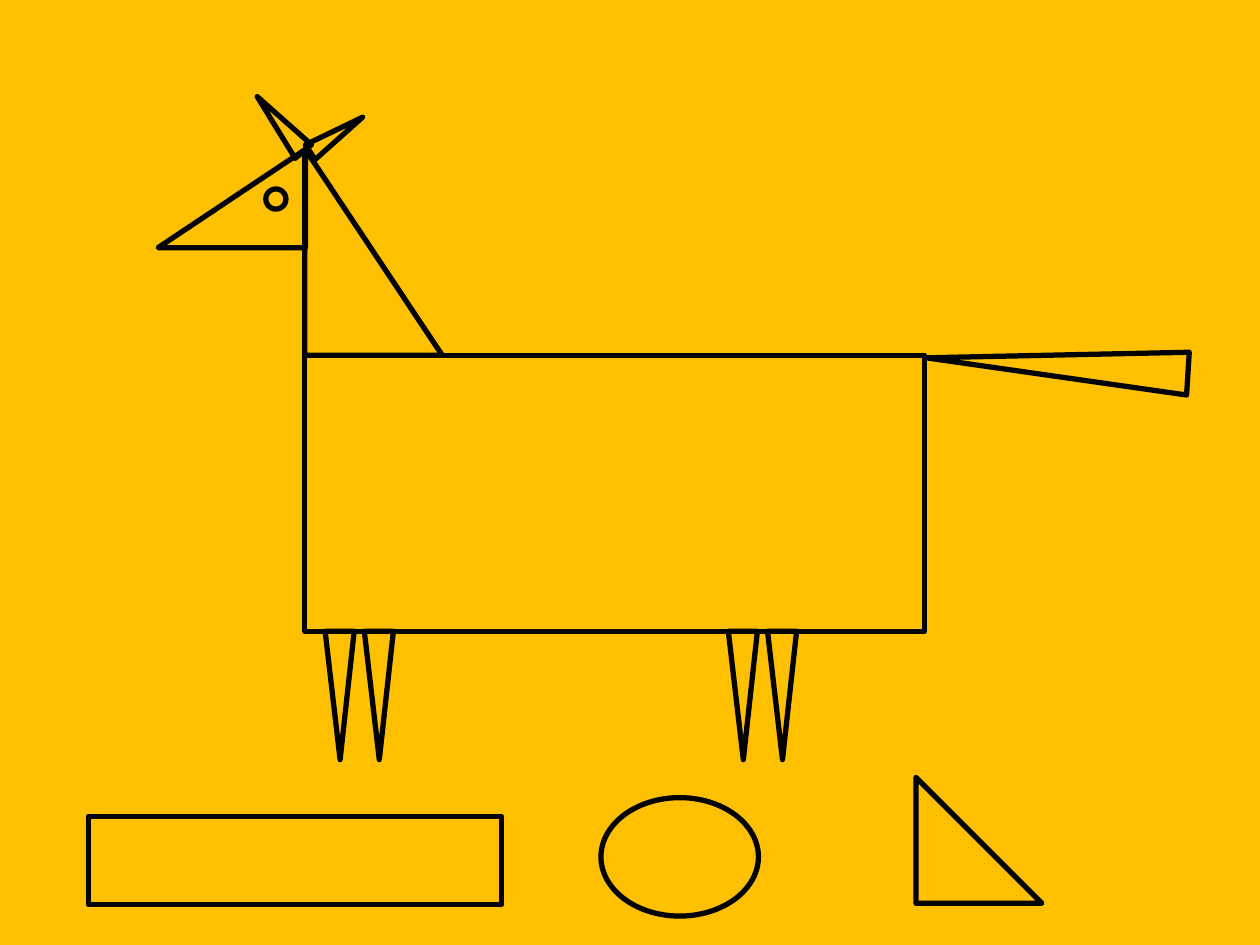
import pptx
import pptx.dml.color
import pptx.enum.shapes
import pptx.util

Pt = pptx.util.Pt
KIND = pptx.enum.shapes.MSO_SHAPE
AMBER = pptx.dml.color.RGBColor(0xFF, 0xC0, 0x00)
BLACK = pptx.dml.color.RGBColor(0x00, 0x00, 0x00)
BODY_LEFT, BODY_TOP, BODY_WIDTH, BODY_HEIGHT = 174.2, 203, 354.2, 157.7
BODY_BOTTOM = BODY_TOP + BODY_HEIGHT
LEG_GAP = 22.4
TRIANGLE_APEX = 0.485


def add_outline(shapes, kind, left, top, width, height, rotation=0, apex=None):
    shape = shapes.add_shape(kind, Pt(left), Pt(top), Pt(width), Pt(height))
    shape.shadow.inherit = False
    shape.fill.background()
    shape.line.fill.solid()
    line_format = {"color.rgb": BLACK, "width": Pt(3)}
    shape.line.color.rgb = line_format["color.rgb"]
    shape.line.width = line_format["width"]
    shape.rotation = rotation
    if apex is not None:
        shape.adjustments[0] = apex
    return shape


def add_head(shapes):
    add_outline(shapes, KIND.RIGHT_TRIANGLE, BODY_LEFT, 85, 78.5, 118)
    add_outline(shapes, KIND.ISOSCELES_TRIANGLE, 187.2, 59, 10.1, 36, 56.2)
    add_outline(shapes, KIND.ISOSCELES_TRIANGLE, 154.1, 50.4, 12.2, 41, 320)
    add_outline(shapes, KIND.RIGHT_TRIANGLE, 104.4, 71.3, 56.2, 84.2, 270)
    add_outline(shapes, KIND.OVAL, 151.9, 108, 11.5, 11.5)


def add_legs(shapes):
    for pair_left in (185.8, 416.2):
        for step in range(2):
            add_outline(shapes, KIND.ISOSCELES_TRIANGLE, pair_left + step * LEG_GAP,
                        BODY_BOTTOM, 16.6, 73.4, 180, TRIANGLE_APEX)


def add_animal(page):
    shapes = page.shapes.add_group_shape().shapes
    add_outline(shapes, KIND.RECTANGLE, BODY_LEFT, BODY_TOP, BODY_WIDTH, BODY_HEIGHT)
    add_head(shapes)
    add_legs(shapes)
    add_outline(shapes, KIND.ISOSCELES_TRIANGLE, 591.8, 133.9, 24.5, 149.8,
                273.6, TRIANGLE_APEX)


def add_sample_shapes(page):
    add_outline(page.shapes, KIND.RECTANGLE, 50.4, 466.6, 236.2, 50.4)
    add_outline(page.shapes, KIND.OVAL, 343.4, 455.8, 90, 67.7)
    add_outline(page.shapes, KIND.RIGHT_TRIANGLE, 523.4, 444.2, 72, 72)


def main():
    deck = pptx.Presentation()
    size = {"slide_width": Pt(720), "slide_height": Pt(540)}
    for name, value in size.items():
        setattr(deck, name, value)
    page = deck.slides.add_slide(deck.slide_layouts[6])
    page.background.fill.solid()
    page.background.fill.fore_color.rgb = AMBER
    add_animal(page)
    add_sample_shapes(page)
    deck.save("out.pptx")


if __name__ == "__main__":
    main()
